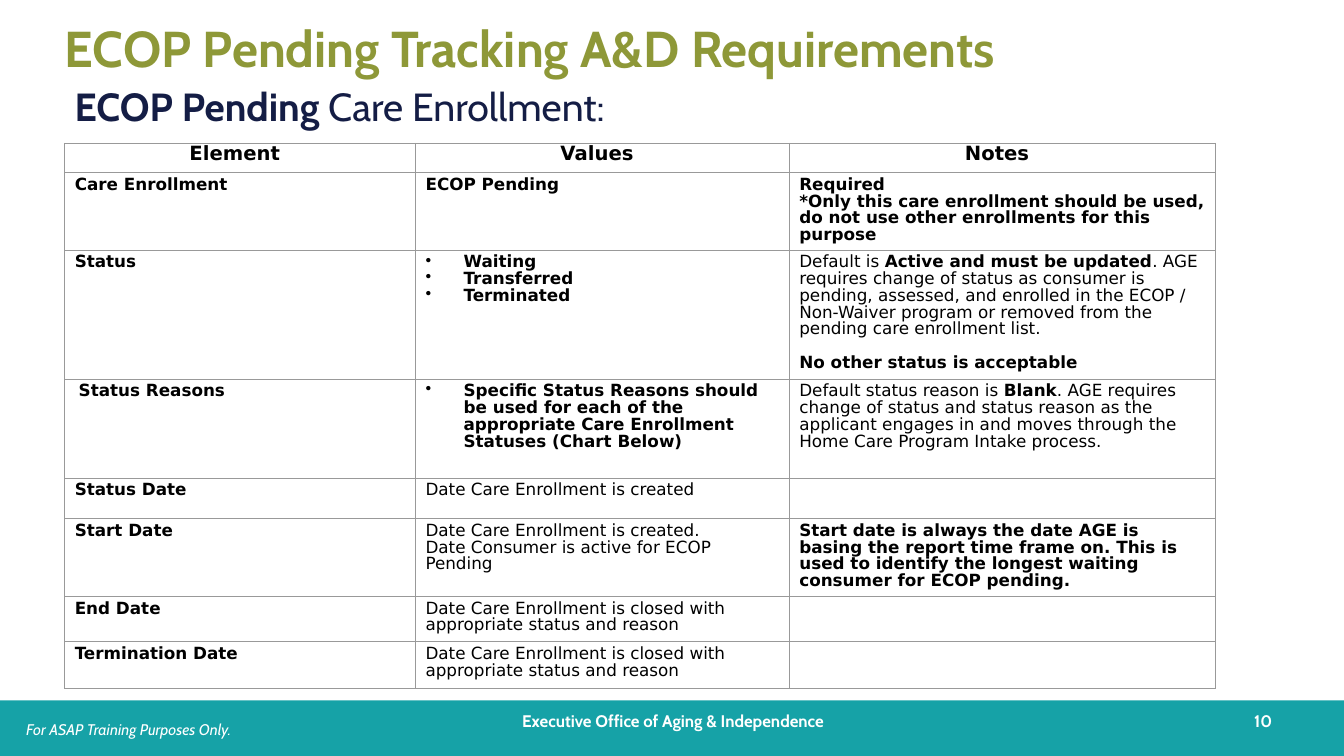
"""Build the ECOP Pending care enrollment slide with its requirements table."""
from dataclasses import dataclass
from typing import NamedTuple

from lxml.etree import SubElement
from pptx import Presentation
from pptx.dml.color import RGBColor as RGB
from pptx.enum.shapes import MSO_SHAPE as SHAPE
from pptx.enum.text import MSO_ANCHOR as ANCHOR, MSO_AUTO_SIZE as AUTO, PP_ALIGN as ALIGN
from pptx.oxml.ns import qn
from pptx.util import Cm, Pt


@dataclass(frozen=True)
class Theme:
    font: str = "Cabin"
    table_font: str = "DejaVu Sans"
    olive: RGB = RGB(0x8E, 0x98, 0x38)
    navy: RGB = RGB(0x14, 0x1D, 0x45)
    teal: RGB = RGB(0x16, 0xA2, 0xA7)
    white: RGB = RGB(0xFF, 0xFF, 0xFF)
    black: RGB = RGB(0, 0, 0)
    grid: str = "999999"
    title: int = 36
    subtitle: int = 28
    header: int = 14
    body: int = 12
    note: int = 11
    leading: int = 12


class Box(NamedTuple):
    left: float
    top: float
    width: float
    height: float


@dataclass(frozen=True)
class Label:
    text: str
    box: Box
    size: int
    color: RGB
    align: ALIGN = ALIGN.LEFT
    anchor: ANCHOR = ANCHOR.TOP
    italic: bool = False


@dataclass(frozen=True)
class Para:
    text: str
    bullet: bool = False
    before: int = 0
    indent: float = 0


@dataclass(frozen=True)
class Row:
    height: float
    cells: tuple[list[Para], list[Para], list[Para]]


T = Theme()
COLUMNS = (8.84, 9.42, 10.74)
TABLE_LEFT, TABLE_TOP = 1.63, 3.61
HANGING = 0.96
HEADER_RIGHT = 0.52
TITLE = "ECOP Pending Tracking A&D Requirements"
TITLE_BOX = Box(1.63, 0.64, 30.73, 1.12)
BAND = Box(0, 17.65, 33.87, 1.4)

LABELS = [
    Label("**ECOP Pending** Care Enrollment:", Box(1.63, 1.96, 28.24, 1.45), T.subtitle, T.navy),
    Label("For ASAP Training Purposes Only.", Box(0.41, 18.03, 7.87, 0.74), T.note, T.white,
          italic=True),
    Label("**Executive Office of Aging & Independence**", Box(11.25, 17.65, 11.43, 1.02),
          T.body, T.white, ALIGN.CENTER, ANCHOR.MIDDLE),
    Label("**10**", Box(31.01, 17.65, 1.3, 1.02), T.body, T.white, ALIGN.RIGHT, ANCHOR.MIDDLE),
]

CLOSED = Para("Date Care Enrollment is closed with appropriate status and reason")
ROWS = [
    Row(0.74, ([Para("**Element**")], [Para("**Values**")], [Para("**Notes**")])),
    Row(1.95, (
        [Para("**Care Enrollment**")],
        [Para("**ECOP Pending**")],
        [Para("**Required**"),
         Para("***Only this care enrollment should be used, do not use other enrollments "
              "for this purpose**")])),
    Row(3.25, (
        [Para("**Status**")],
        [Para(f"**{status}**", bullet=True) for status in ("Waiting", "Transferred", "Terminated")],
        [Para("Default is **Active and must be updated**. AGE requires change of status as "
              "consumer is pending, assessed, and enrolled in the ECOP / Non-Waiver program "
              "or removed from the pending care enrollment list."),
         Para("**No other status is acceptable**", before=T.leading)])),
    Row(2.5, (
        [Para("**Status Reasons**", indent=0.1)],
        [Para("**Specific Status Reasons should be used for each of the appropriate "
              "Care Enrollment Statuses (Chart Below)**", bullet=True)],
        [Para("Default status reason is **Blank**. AGE requires change of status and status "
              "reason as the applicant engages in and moves through the Home Care Program "
              "Intake process.")])),
    Row(0.85, ([Para("**Status Date**")], [Para("Date Care Enrollment is created")], [])),
    Row(1.96, (
        [Para("**Start Date**")],
        [Para("Date Care Enrollment is created."),
         Para("Date Consumer is active for ECOP Pending")],
        [Para("**Start date is always the date AGE is basing the report time frame on. This is "
              "used to identify the longest waiting consumer for ECOP pending.**")])),
    Row(1.15, ([Para("**End Date**")], [CLOSED], [])),
    Row(1.17, ([Para("**Termination Date**")], [CLOSED], [])),
]


def cm(box: Box) -> list[Cm]:
    """Convert a box to lengths."""
    return [Cm(v) for v in box]


def write(p, text: str, font: str, size: int, color: RGB, italic: bool = False) -> None:
    """Write text into a paragraph, with bold parts between double asterisks."""
    for i, part in enumerate(text.split("**")):
        if part:
            r = p.add_run()
            r.text = part
            r.font.name, r.font.size, r.font.color.rgb = font, Pt(size), color
            r.font.bold, r.font.italic = i % 2 == 1, italic


def add_title(slide) -> None:
    """Place and format the title placeholder."""
    sp = slide.shapes.title
    sp.left, sp.top, sp.width, sp.height = cm(TITLE_BOX)
    tf = sp.text_frame
    tf.margin_left = tf.margin_right = tf.margin_top = tf.margin_bottom = 0
    tf.vertical_anchor, tf.auto_size, tf.word_wrap = ANCHOR.MIDDLE, AUTO.NONE, True
    p = tf.paragraphs[0]
    p.alignment = ALIGN.LEFT
    p.line_spacing = 1.0
    write(p, f"**{TITLE}**", T.font, T.title, T.olive)


def add_band(slide) -> None:
    """Draw the footer band."""
    sp = slide.shapes.add_shape(SHAPE.RECTANGLE, *cm(BAND))
    sp.shadow.inherit = False
    sp.fill.solid()
    sp.fill.fore_color.rgb = T.teal
    sp.line.fill.background()


def add_label(slide, label: Label) -> None:
    """Add one text box."""
    tf = slide.shapes.add_textbox(*cm(label.box)).text_frame
    tf.word_wrap, tf.vertical_anchor = True, label.anchor
    p = tf.paragraphs[0]
    p.alignment = label.align
    write(p, label.text, T.font, label.size, label.color, label.italic)


def style_cell(cell) -> None:
    """Give a cell thin borders and no fill."""
    tcPr = cell._tc.get_or_add_tcPr()
    for side in ("lnL", "lnR", "lnT", "lnB"):
        ln = SubElement(tcPr, qn(f"a:{side}"), w=str(Pt(0.75)))
        SubElement(SubElement(ln, qn("a:solidFill")), qn("a:srgbClr"), val=T.grid)
    cell.fill.background()


def fill_cell(cell, paras: list[Para], header: bool) -> None:
    """Write the paragraphs of one cell."""
    tf = cell.text_frame
    if header:
        cell.margin_right = Cm(HEADER_RIGHT)
    for i, para in enumerate(paras or [Para("")]):
        p = tf.paragraphs[0] if i == 0 else tf.add_paragraph()
        p.alignment = ALIGN.CENTER if header else ALIGN.LEFT
        p.line_spacing, p.space_before = Pt(T.leading), Pt(para.before)
        pPr = p._p.get_or_add_pPr()
        pPr.set("marL", str(Cm(HANGING if para.bullet else para.indent)))
        if para.bullet:
            pPr.set("indent", str(-Cm(HANGING)))
            SubElement(pPr, qn("a:buChar"), char="•")
        write(p, para.text, T.table_font, T.header if header else T.body, T.black)


def add_table(slide) -> None:
    """Add the requirements table."""
    box = Box(TABLE_LEFT, TABLE_TOP, sum(COLUMNS), sum(row.height for row in ROWS))
    table = slide.shapes.add_table(len(ROWS), len(COLUMNS), *cm(box)).table
    table.first_row = table.horz_banding = False
    for column, width in zip(table.columns, COLUMNS):
        column.width = Cm(width)
    for i, row in enumerate(ROWS):
        table.rows[i].height = Cm(row.height)
        for j, paras in enumerate(row.cells):
            style_cell(table.cell(i, j))
            fill_cell(table.cell(i, j), paras, i == 0)


def main() -> None:
    """Build and save the presentation."""
    prs = Presentation()
    prs.slide_width, prs.slide_height = Cm(33.87), Cm(19.05)
    slide = prs.slides.add_slide(prs.slide_layouts[5])
    add_band(slide)
    add_title(slide)
    for label in LABELS:
        add_label(slide, label)
    add_table(slide)
    prs.save("out.pptx")


if __name__ == "__main__":
    main()
